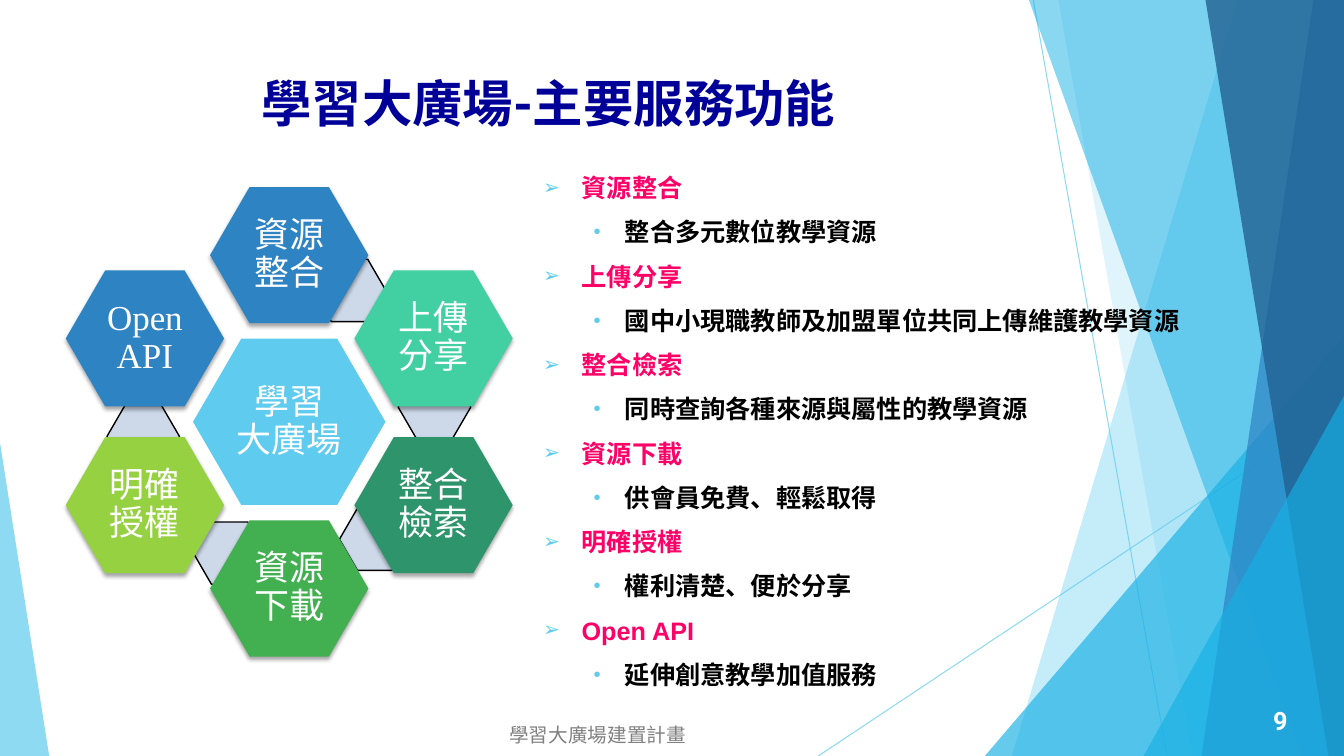
"""Build the slide on the main services of the learning plaza."""
from dataclasses import dataclass
from math import cos, radians, sin

from lxml.etree import SubElement
from pptx import Presentation
from pptx.dml.color import RGBColor
from pptx.enum.shapes import MSO_CONNECTOR, MSO_SHAPE
from pptx.enum.text import MSO_ANCHOR, PP_ALIGN
from pptx.oxml.ns import qn
from pptx.util import Cm, Pt


@dataclass(frozen=True)
class Theme:
    """Colours, fonts and type sizes of the slide."""

    sky: str = "5FCBEF"
    azure: str = "17B0E4"
    blue: str = "2E83C3"
    deep: str = "226292"
    navy: str = "000099"
    pink: str = "FF0066"
    mint: str = "42D0A2"
    teal: str = "2E946B"
    green: str = "42B051"
    lime: str = "96D141"
    link: str = "CDD9E9"
    grey: str = "808080"
    black: str = "000000"
    white: str = "FFFFFF"
    heading_font: str = "Roboto"
    body_font: str = "Arial"
    hexagon_font: str = "Times New Roman"
    title: int = 36
    hexagon: int = 25
    body: int = 18
    footer: int = 14


THEME = Theme()
WIDTH, HEIGHT = 33.87, 19.05
RING_CENTRE = (7.29, 10.63)
RING_RADIUS = 4.2
CORE_SIZE, SERVICE_SIZE, LINK_SIZE = (4.85, 4.19), (3.99, 3.43), (1.83, 1.57)

RAYS = [((26.04, 0), (29.41, HEIGHT)), ((WIDTH, 10.24), (20.62, HEIGHT))]
BACK_FACETS = [(31.19, 25.5, THEME.sky, 36), (26.67, 30.05, THEME.sky, 20)]
FRONT_FACETS = [
    (25.93, 32.79, THEME.azure, 50),
    (33.1, 30.28, THEME.blue, 70),
    (30.38, 33.48, THEME.deep, 80),
]
SERVICES = [
    ("資源整合", "整合多元數位教學資源", THEME.blue, (8.81, 7.32)),
    ("上傳分享", "國中小現職教師及加盟單位共同上傳維護教學資源", THEME.mint, (10.95, 10.26)),
    ("整合檢索", "同時查詢各種來源與屬性的教學資源", THEME.teal, (9.47, 13.59)),
    ("資源下載", "供會員免費、輕鬆取得", THEME.green, (5.79, 13.94)),
    ("明確授權", "權利清楚、便於分享", THEME.lime, (3.61, 11)),
    ("Open API", "延伸創意教學加值服務", THEME.blue, None),
]


def set_opacity(item, percent):
    """Set the opacity of the first colour of a shape or line."""
    colour = next(item._element.spPr.iter(qn("a:srgbClr")))
    SubElement(colour, qn("a:alpha"), val=str(percent * 1000))


def paint(shape, colour, opacity=100):
    """Give a shape a flat fill with no outline and no shadow."""
    shape.fill.solid()
    shape.fill.fore_color.rgb = RGBColor.from_string(colour)
    shape.line.fill.background()
    shape.shadow.inherit = False
    if opacity < 100:
        set_opacity(shape, opacity)


def style_font(font, name, size, colour, bold=False):
    """Set the typeface, size, colour and weight of a font."""
    font.name, font.size, font.bold = name, Pt(size), bold
    font.color.rgb = RGBColor.from_string(colour)


def add_ray(page, start, end):
    """Draw a thin translucent line."""
    ray = page.shapes.add_connector(
        MSO_CONNECTOR.STRAIGHT, *[Cm(value) for value in (*start, *end)])
    ray.line.width = Pt(0.75)
    ray.line.color.rgb = RGBColor.from_string(THEME.sky)
    set_opacity(ray, 70)
    SubElement(ray._element.spPr, qn("a:effectLst"))


def add_facet(page, top, bottom, colour, opacity):
    """Draw a full-height panel from a slanted left edge to the right border."""
    builder = page.shapes.build_freeform(Cm(top), 0)
    corners = [(WIDTH, 0), (WIDTH, HEIGHT), (bottom, HEIGHT)]
    builder.add_line_segments([(Cm(x), Cm(y)) for x, y in corners])
    paint(builder.convert_to_shape(), colour, opacity)


def add_corner(page, left, top, width, apex, colour, opacity):
    """Draw a right triangle standing on the bottom border."""
    corner = page.shapes.add_shape(
        MSO_SHAPE.ISOSCELES_TRIANGLE, Cm(left), Cm(top), Cm(width), Cm(HEIGHT - top))
    corner.adjustments[0] = apex
    paint(corner, colour, opacity)


def add_backdrop(page):
    """Draw the lines and translucent panels behind the content."""
    for start, end in RAYS:
        add_ray(page, start, end)
    for facet in BACK_FACETS:
        add_facet(page, *facet)
    add_corner(page, 24.82, 8.46, 9.05, 1, THEME.azure, 66)
    for facet in FRONT_FACETS:
        add_facet(page, *facet)
    add_corner(page, 28.82, 9.98, 5.05, 1, THEME.azure, 66)
    add_corner(page, 0, 11.15, 1.24, 0, THEME.sky, 70)


def add_hexagon(page, centre, size, colour, text=""):
    """Draw a hexagon around a centre, with an optional label."""
    (x, y), (width, height) = centre, size
    hexagon = page.shapes.add_shape(
        MSO_SHAPE.HEXAGON, Cm(x - width / 2), Cm(y - height / 2), Cm(width), Cm(height))
    hexagon.adjustments[0] = 0.29
    paint(hexagon, colour)
    if text:
        frame = hexagon.text_frame
        frame.text, frame.word_wrap = text, True
        frame.vertical_anchor = MSO_ANCHOR.MIDDLE
        frame.margin_left = frame.margin_right = Cm(0.08)
        frame.margin_top = frame.margin_bottom = Cm(0.08)
        para = frame.paragraphs[0]
        para.alignment, para.line_spacing = PP_ALIGN.CENTER, 0.9
        for span in para.runs:
            style_font(span.font, THEME.hexagon_font, THEME.hexagon, THEME.white)
    return hexagon


def add_drop_shadow(shape):
    """Cast a soft shadow below a shape."""
    effects = shape._element.spPr.find(qn("a:effectLst"))
    shadow = SubElement(effects, qn("a:outerShdw"), blurRad=str(Pt(3)),
                        dist=str(Pt(2)), dir="5400000", rotWithShape="0")
    colour = SubElement(shadow, qn("a:srgbClr"), val=THEME.black)
    SubElement(colour, qn("a:alpha"), val="35000")


def add_ring(page):
    """Draw the core hexagon and the ring of services around it."""
    add_hexagon(page, RING_CENTRE, CORE_SIZE, THEME.sky, "學習\v大廣場")
    for index, (name, _, colour, link_centre) in enumerate(SERVICES):
        if link_centre:
            link = add_hexagon(page, link_centre, LINK_SIZE, THEME.link)
            link.line.color.rgb = RGBColor.from_string(THEME.black)
            link.line.width = Pt(1)
        angle = radians(index * 360 / len(SERVICES))
        centre = (RING_CENTRE[0] + RING_RADIUS * sin(angle),
                  RING_CENTRE[1] - RING_RADIUS * cos(angle))
        add_drop_shadow(add_hexagon(page, centre, SERVICE_SIZE, colour, name))


def add_text(page, place, text, size, colour, bold=False, anchor=MSO_ANCHOR.MIDDLE):
    """Add one centred line of text."""
    frame = page.shapes.add_textbox(*[Cm(value) for value in place]).text_frame
    frame.text, frame.word_wrap, frame.vertical_anchor = text, True, anchor
    para = frame.paragraphs[0]
    para.alignment = PP_ALIGN.CENTER
    style_font(para.runs[0].font, THEME.heading_font, size, colour, bold)


def add_bullet(para, symbol, left, hanging):
    """Give a paragraph a hanging bullet."""
    properties = para._p.get_or_add_pPr()
    properties.set("marL", str(Cm(left)))
    properties.set("indent", str(-Cm(hanging)))
    SubElement(SubElement(properties, qn("a:buClr")), qn("a:srgbClr"), val=THEME.sky)
    SubElement(properties, qn("a:buSzPct"), val="80000")
    SubElement(properties, qn("a:buFont"), typeface=THEME.body_font)
    SubElement(properties, qn("a:buChar"), char=symbol)


def add_service_list(page):
    """List each service with its description."""
    frame = page.shapes.add_textbox(Cm(13.44), Cm(4.22), Cm(20.9), Cm(13.36)).text_frame
    frame.word_wrap = True
    lines = [(level, text) for service in SERVICES for level, text in enumerate(service[:2])]
    looks = [("➢", 0.97, 0.97, THEME.pink), ("•", 2.06, 0.79, THEME.black)]
    for index, (level, text) in enumerate(lines):
        para = frame.add_paragraph() if index else frame.paragraphs[0]
        symbol, left, hanging, colour = looks[level]
        para.text, para.level = text, level
        add_bullet(para, symbol, left, hanging)
        if index:
            para.space_before = Pt(10)
        style_font(para.runs[0].font, THEME.body_font, THEME.body, colour, True)


def main():
    """Build and save the deck."""
    deck = Presentation()
    deck.slide_width, deck.slide_height = Cm(WIDTH), Cm(HEIGHT)
    page = deck.slides.add_slide(deck.slide_layouts[6])
    add_backdrop(page)
    add_text(page, (1.88, 1.7, 23.88, 1.85), "學習大廣場-主要服務功能",
             THEME.title, THEME.navy, True, MSO_ANCHOR.TOP)
    add_text(page, (31.32, 17.65, 1.9, 1.02), "9", THEME.body, THEME.white, True)
    add_ring(page)
    add_text(page, (10.52, 18.01, 9.09, 1.02), "學習大廣場建置計畫", THEME.footer, THEME.grey)
    add_service_list(page)
    deck.save("out.pptx")


if __name__ == "__main__":
    main()
